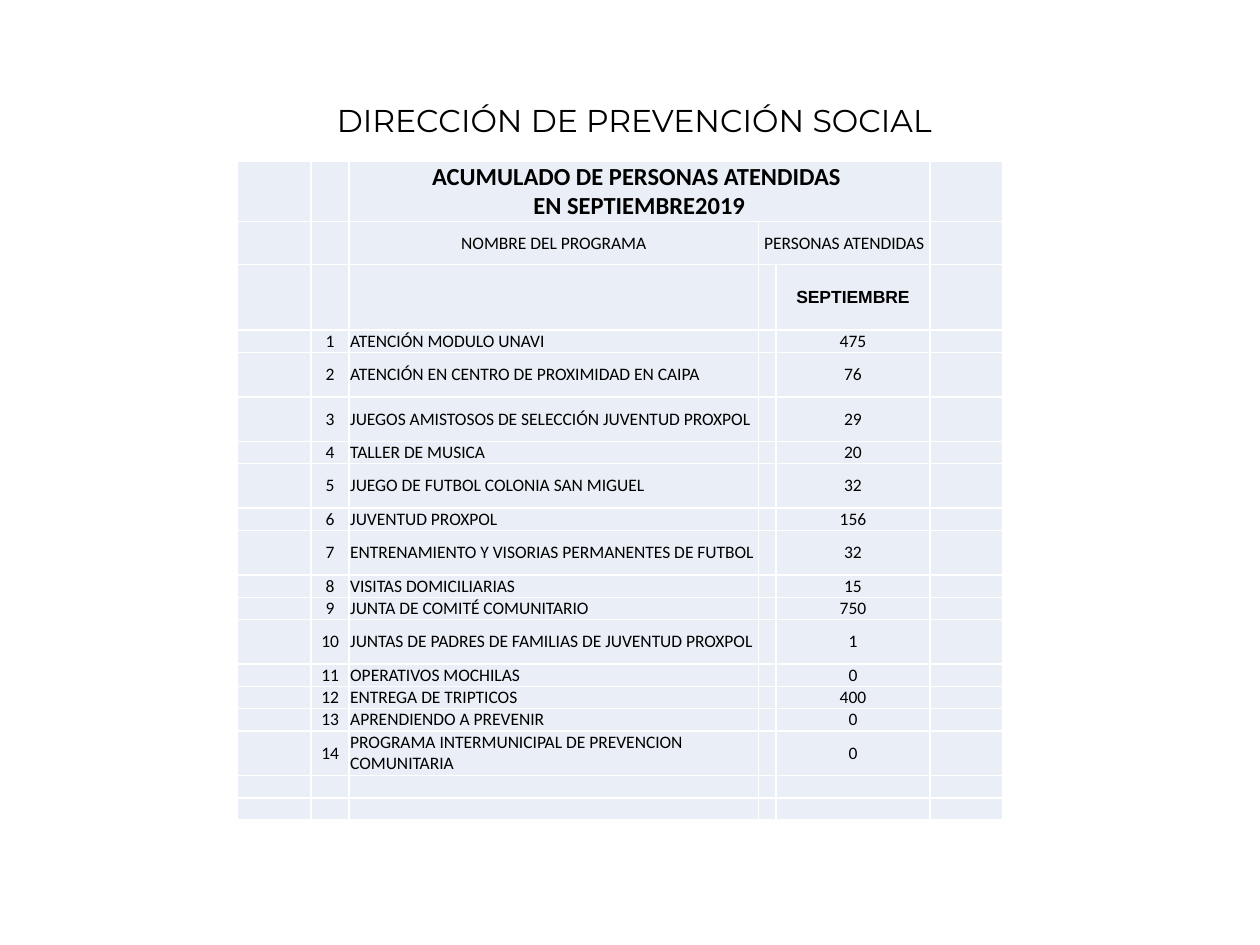
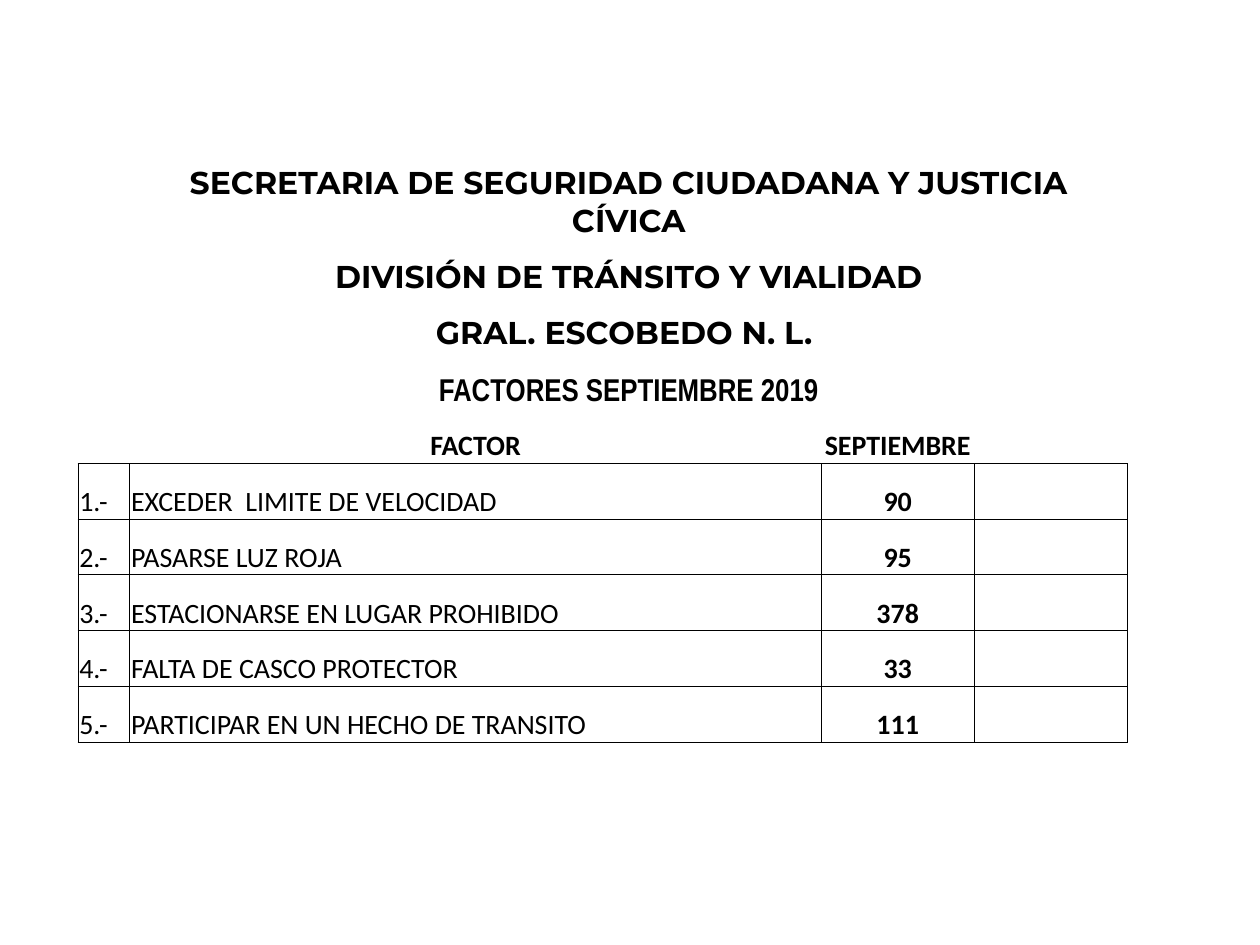
from dataclasses import dataclass
from itertools import product

from lxml.etree import SubElement as Sub
from pptx import Presentation
from pptx.dml.color import RGBColor as Rgb
from pptx.enum.text import MSO_ANCHOR as Anchor, MSO_AUTO_SIZE as Fit, PP_ALIGN as Align
from pptx.oxml.ns import qn
from pptx.slide import Slide
from pptx.table import Table, _Cell as Cell
from pptx.text.text import _Paragraph as Para
from pptx.util import Inches, Pt


@dataclass(frozen=True)
class Ink:
    size: float
    font: str
    bold: bool = False


@dataclass(frozen=True)
class Theme:
    text: str = "000000"
    white: str = "FFFFFF"
    band: str = "EAEFF7"
    plain: str = "{2D5ABB26-0587-4C30-8999-92F81FD0307C}"
    title: Ink = Ink(18, "Montserrat")
    head: Ink = Ink(18, "Montserrat", True)
    narrow: Ink = Ink(18, "Arial Narrow", True)
    total: Ink = Ink(14, "Calibri", True)
    month: Ink = Ink(10, "Arial", True)
    small: Ink = Ink(10, "Calibri")
    body: Ink = Ink(16, "Calibri")
    strong: Ink = Ink(16, "Calibri", True)


@dataclass(frozen=True)
class Item:
    row: int
    col: int
    lines: tuple[str, ...]
    ink: Ink
    align: Align = Align.CENTER
    span: int = 1


@dataclass(frozen=True)
class Grid:
    left: float
    top: float
    cols: tuple[float, ...]
    rows: tuple[float, ...]
    anchor: Anchor
    blank: Ink
    line: str
    width: float
    first: int = 0
    fill: str | None = None


THEME = Theme()

PROGRAMS = (
    ("ATENCIÓN MODULO UNAVI", 475, 1),
    ("ATENCIÓN EN CENTRO DE PROXIMIDAD EN CAIPA", 76, 2),
    ("JUEGOS AMISTOSOS DE SELECCIÓN JUVENTUD PROXPOL", 29, 2),
    ("TALLER DE MUSICA", 20, 1),
    ("JUEGO DE FUTBOL COLONIA SAN MIGUEL", 32, 2),
    ("JUVENTUD PROXPOL", 156, 1),
    ("ENTRENAMIENTO Y VISORIAS PERMANENTES DE FUTBOL", 32, 2),
    ("VISITAS DOMICILIARIAS", 15, 1),
    ("JUNTA DE COMITÉ COMUNITARIO", 750, 1),
    ("JUNTAS DE PADRES DE FAMILIAS DE JUVENTUD PROXPOL", 1, 2),
    ("OPERATIVOS MOCHILAS", 0, 1),
    ("ENTREGA DE TRIPTICOS", 400, 1),
    ("APRENDIENDO A PREVENIR", 0, 1),
    ("PROGRAMA INTERMUNICIPAL DE PREVENCION COMUNITARIA", 0, 2),
)

FACTORS = (
    ("EXCEDER  LIMITE DE VELOCIDAD", 90),
    ("PASARSE LUZ ROJA", 95),
    ("ESTACIONARSE EN LUGAR PROHIBIDO", 378),
    ("FALTA DE CASCO PROTECTOR", 33),
    ("PARTICIPAR EN UN HECHO DE TRANSITO", 111),
)


def write(para: Para, text: str, ink: Ink, align: Align) -> None:
    para.alignment = align
    run = para.add_run()
    run.text = text
    run.font.size = Pt(ink.size)
    run.font.name = ink.font
    run.font.bold = ink.bold
    run.font.color.rgb = Rgb.from_string(THEME.text)


def edge(cell: Cell, sides: str, grid: Grid) -> None:
    props = cell._tc.get_or_add_tcPr()
    for side in "LRTB":
        line = Sub(props, qn(f"a:ln{side}"), w=str(Pt(grid.width)))
        if side in sides:
            paint = Sub(line, qn("a:solidFill"))
            Sub(paint, qn("a:srgbClr"), val=grid.line)
        else:
            Sub(line, qn("a:noFill"))


def style(cell: Cell, row: int, grid: Grid) -> None:
    cell.margin_left = cell.margin_right = Inches(0.01)
    cell.margin_top = cell.margin_bottom = Inches(0)
    cell.vertical_anchor = grid.anchor
    sides = "LRTB" if row >= grid.first else "B" if row == grid.first - 1 else ""
    edge(cell, sides, grid)
    if grid.fill:
        cell.fill.solid()
        cell.fill.fore_color.rgb = Rgb.from_string(grid.fill)
    else:
        cell.fill.background()
    para = cell.text_frame.paragraphs[0]
    Sub(para._p, qn("a:endParaRPr"), sz=str(grid.blank.size * 100))


def place(table: Table, item: Item) -> None:
    cell = table.cell(item.row, item.col)
    if item.span > 1:
        cell.merge(table.cell(item.row, item.col + item.span - 1))
    frame = cell.text_frame
    for i, text in enumerate(item.lines):
        para = frame.add_paragraph() if i else frame.paragraphs[0]
        write(para, text, item.ink, item.align)


def draw(slide: Slide, grid: Grid, items: list[Item]) -> None:
    rows, cols = len(grid.rows), len(grid.cols)
    frame = slide.shapes.add_table(
        rows, cols, Inches(grid.left), Inches(grid.top),
        Inches(sum(grid.cols)), Inches(sum(grid.rows)))
    table = frame.table
    table.first_row = table.horz_banding = False
    table._tbl.tblPr.find(qn("a:tableStyleId")).text = THEME.plain
    for col, width in zip(table.columns, grid.cols):
        col.width = Inches(width)
    for row, height in zip(table.rows, grid.rows):
        row.height = Inches(height)
    for r, c in product(range(rows), range(cols)):
        style(table.cell(r, c), r, grid)
    for item in items:
        place(table, item)


def social(slide: Slide) -> None:
    box = slide.shapes.add_textbox(Inches(1.61), Inches(0.75), Inches(6.85), Inches(0.4))
    frame = box.text_frame
    frame.word_wrap = True
    frame.auto_size = Fit.SHAPE_TO_FIT_TEXT
    write(frame.paragraphs[0], "DIRECCIÓN DE PREVENCIÓN SOCIAL", THEME.title, Align.CENTER)

    units = [size for _, _, size in PROGRAMS] + [1, 1]
    step = 3.89 / sum(units)
    grid = Grid(
        1.88, 1.28, (0.59, 0.3, 3.25, 0.14, 1.22, 0.58),
        (0.48, 0.34, 0.52, *(step * n for n in units)),
        Anchor.MIDDLE, THEME.small, THEME.white, 1, fill=THEME.band)
    items = [
        Item(0, 2, ("ACUMULADO DE PERSONAS ATENDIDAS ", "EN SEPTIEMBRE2019"), THEME.total, span=3),
        Item(1, 2, ("NOMBRE DEL PROGRAMA",), THEME.small),
        Item(1, 3, ("PERSONAS ATENDIDAS",), THEME.small, span=2),
        Item(2, 4, ("SEPTIEMBRE",), THEME.month),
    ]
    for i, (name, count, _) in enumerate(PROGRAMS, 1):
        items += [
            Item(i + 2, 1, (str(i),), THEME.small),
            Item(i + 2, 2, (name,), THEME.small, Align.LEFT),
            Item(i + 2, 4, (str(count),), THEME.small),
        ]
    draw(slide, grid, items)


def traffic(slide: Slide) -> None:
    heads = (
        ("SECRETARIA DE SEGURIDAD CIUDADANA Y JUSTICIA CÍVICA", THEME.head),
        ("DIVISIÓN DE TRÁNSITO Y VIALIDAD", THEME.head),
        ("GRAL. ESCOBEDO N. L. ", THEME.head),
        ("FACTORES SEPTIEMBRE 2019", THEME.narrow),
    )
    label = len(heads)
    first = label + 1
    rest = label + len(FACTORS)
    grid = Grid(
        0.62, 1.29, (0.41, 5.49, 1.21, 1.22), (0.62, *[3.98 / rest] * rest),
        Anchor.BOTTOM, THEME.body, THEME.text, 0.5, first)
    items = [Item(r, 1, (text,), ink, span=3) for r, (text, ink) in enumerate(heads)]
    items += [
        Item(label, 1, ("FACTOR",), THEME.strong),
        Item(label, 2, ("SEPTIEMBRE",), THEME.strong),
    ]
    for i, (name, count) in enumerate(FACTORS):
        items += [
            Item(first + i, 0, (f"{i + 1}.-",), THEME.body, Align.LEFT),
            Item(first + i, 1, (name,), THEME.body, Align.LEFT),
            Item(first + i, 2, (str(count),), THEME.strong),
        ]
    draw(slide, grid, items)


def main() -> None:
    deck = Presentation()
    deck.slide_width, deck.slide_height = Inches(10), Inches(7.5)
    for build in (social, traffic):
        build(deck.slides.add_slide(deck.slide_layouts[6]))
    deck.save("out.pptx")


if __name__ == "__main__":
    main()
